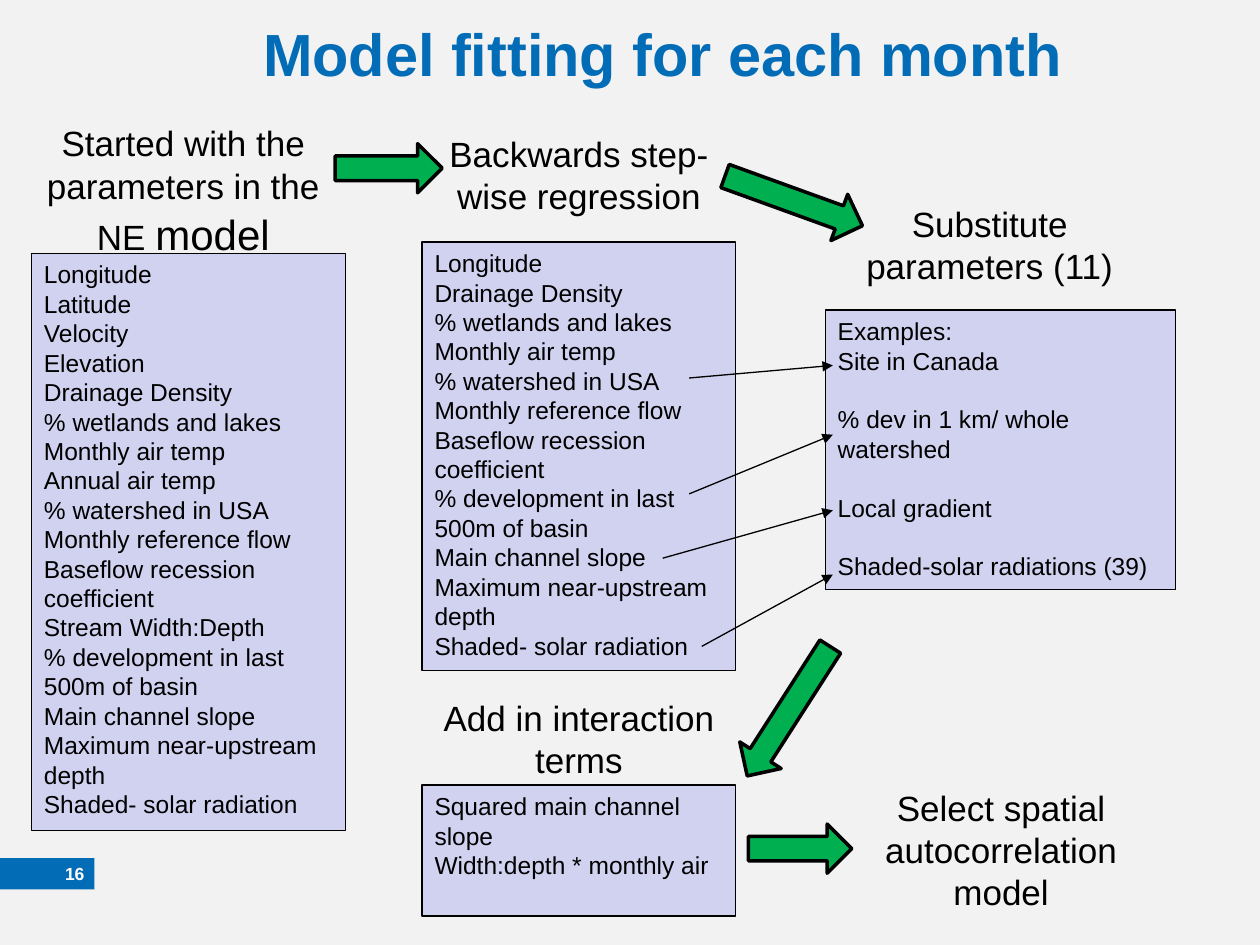
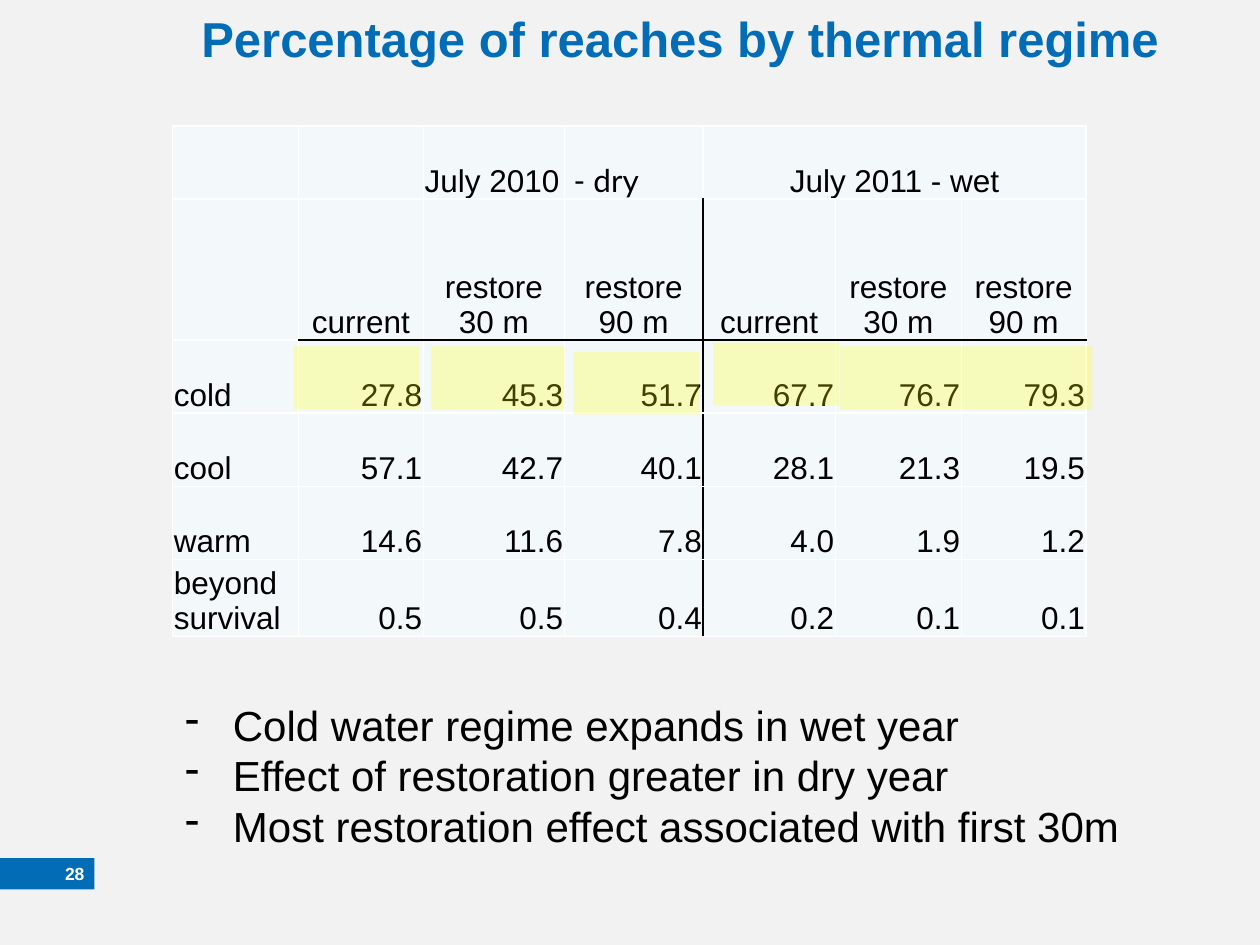
from lxml.etree import SubElement
from pptx import Presentation
from pptx.dml.color import RGBColor
from pptx.enum.shapes import MSO_CONNECTOR, MSO_SHAPE
from pptx.enum.text import MSO_ANCHOR, PP_ALIGN
from pptx.oxml.ns import qn
from pptx.util import Emu, Pt

EMU_PER_PX = 9144  # 100 px to the inch
FONT = "Arial"
LEADING = 1.2
COLORS = {
    "paper": "F2F2F2",
    "brand": "026CB6",
    "list": "D1D1F0",
    "arrow": "00B050",
    "cell": "F3F9FA",
    "highlight": "FFFF00",
    "ink": "000000",
    "white": "FFFFFF",
}


def px(length):
    return Emu(length * EMU_PER_PX)


def rgb(name):
    return RGBColor.from_string(COLORS[name])


def add_color(parent, name):
    fill = SubElement(parent, qn("a:solidFill"))
    return SubElement(fill, qn("a:srgbClr"), val=COLORS[name])


def set_insets(target, left, top, right, bottom):
    target.margin_left, target.margin_top = px(left), px(top)
    target.margin_right, target.margin_bottom = px(right), px(bottom)


def write(frame, text, size=14, color="ink", bold=False, align=PP_ALIGN.LEFT,
          font=FONT, spacing=None, gap=0, gap_before=(), hanging=0):
    """Fill a text frame from paragraphs; each is a string or (text, size) spans.

    gap is the space in points above the paragraphs numbered in gap_before;
    hanging gives dash bullets with that indent.
    """
    for number, content in enumerate([text] if isinstance(text, str) else text):
        para = frame.paragraphs[0] if number == 0 else frame.add_paragraph()
        if hanging:
            properties = para._p.get_or_add_pPr()
            properties.set("marL", str(px(hanging)))
            properties.set("indent", str(-px(hanging)))
            SubElement(properties, qn("a:buChar"), char="-")
        para.alignment = align
        if spacing:
            para.line_spacing = spacing
        if number in gap_before:
            para.space_before = Pt(gap)
        spans = [(content, size)] if isinstance(content, str) else content
        for words, span_size in spans:
            span = para.add_run()
            span.text = words
            span.font.name = font
            span.font.size = Pt(span_size)
            span.font.bold = bold
            span.font.color.rgb = rgb(color)


class Slides:
    """Holds the deck, its style and the page being drawn."""

    def __init__(self):
        self.deck = Presentation()
        self.deck.slide_width, self.deck.slide_height = px(1000), px(750)

    def new_page(self, number, title, left, top, size):
        self.page = self.deck.slides.add_slide(self.deck.slide_layouts[6])
        background = self.page.background.fill
        background.solid()
        background.fore_color.rgb = rgb("paper")
        self.shape(0, 681, 75, 25, "brand")
        self.text(0, 681, 67, 25, number, size=10, color="white", bold=True,
                  align=PP_ALIGN.RIGHT, insets=(0, 0, 0, 0), anchor=MSO_ANCHOR.MIDDLE)
        self.text(left, top, 990 - left, 83, title, size=size, color="brand", bold=True)

    def text(self, left, top, width, height, text, insets=(10, 5, 10, 5),
             anchor=MSO_ANCHOR.TOP, size=20, **style):
        box = self.page.shapes.add_textbox(px(left), px(top), px(width), px(height))
        frame = box.text_frame
        frame.word_wrap = True
        frame.vertical_anchor = anchor
        set_insets(frame, *insets)
        style.setdefault("spacing", Pt(LEADING * size))
        write(frame, text, size=size, **style)

    def heading(self, left, top, height, text, **style):
        self.text(left, top, 249, height, text, align=PP_ALIGN.CENTER, **style)

    def shape(self, left, top, width, height, color, kind=MSO_SHAPE.RECTANGLE,
              line=0, rotation=0, opacity=100):
        shape = self.page.shapes.add_shape(kind, px(left), px(top), px(width), px(height))
        shape.shadow.inherit = False
        shape.rotation = rotation
        shape.fill.solid()
        shape.fill.fore_color.rgb = rgb(color)
        if opacity < 100:
            tint = shape.fill._xPr.find(qn("a:solidFill"))[0]
            SubElement(tint, qn("a:alpha"), val=str(opacity * 1000))
        if line:
            shape.line.color.rgb = rgb("ink")
            shape.line.width = Pt(line)
        else:
            shape.line.fill.background()
        return shape

    def list_box(self, left, top, width, height, items, **style):
        frame = self.shape(left, top, width, height, "list", line=0.75).text_frame
        frame.word_wrap = True
        frame.vertical_anchor = MSO_ANCHOR.TOP
        write(frame, items, size=14, spacing=Pt(LEADING * 14), **style)

    def block_arrow(self, left, top, width, rotation=0):
        self.shape(left, top, width, 39, "arrow", MSO_SHAPE.RIGHT_ARROW, 2, rotation)

    def thin_arrow(self, start, end):
        line = self.page.shapes.add_connector(
            MSO_CONNECTOR.STRAIGHT, *(px(value) for value in (*start, *end)))
        line.line.color.rgb = rgb("ink")
        line.line.width = Pt(0.75)
        SubElement(line.line._get_or_add_ln(), qn("a:tailEnd"), type="triangle")
        SubElement(line._element.spPr, qn("a:effectLst"))

    def table(self, left, top, widths, heights):
        grid = self.page.shapes.add_table(
            len(heights), len(widths), px(left), px(top), px(sum(widths)), px(sum(heights))).table
        grid.first_row = grid.horz_banding = False
        for column, width in zip(grid.columns, widths):
            column.width = px(width)
        for row, height in zip(grid.rows, heights):
            row.height = px(height)
        return grid

    def cell(self, cell, text, black_edges, **style):
        """Fill a table cell; black_edges names its dark borders among L, R, T, B."""
        cell.vertical_anchor = MSO_ANCHOR.BOTTOM
        set_insets(cell, 1, 1, 1, 0)
        properties = cell._tc.get_or_add_tcPr()
        for edge in "LRTB":
            border = SubElement(properties, qn(f"a:ln{edge}"), w=str(Pt(1)))
            add_color(border, "ink" if edge in black_edges else "white")
        cell.fill.solid()
        cell.fill.fore_color.rgb = rgb("cell")
        if text:
            write(cell.text_frame, text, size=18, **style)


def draw_model_fitting(slides):
    slides.new_page("16", "Model fitting for each month", 199, 9, 34)

    slides.heading(21, 90, 118,
                   [[("Started with the parameters in the NE ", 20), ("model", 24)]],
                   spacing=1.045)
    slides.heading(335, 100, 77, "Backwards step-wise regression")
    slides.heading(661, 156, 77, "Substitute parameters (11)")
    slides.heading(335, 548, 77, "Add in interaction terms")
    slides.heading(670, 619, 111, "Select spatial autocorrelation model")

    basin = ["Baseflow recession coefficient"]
    development = ["% development in last 500m of basin", "Main channel slope",
                   "Maximum near-upstream depth", "Shaded- solar radiation"]
    slides.list_box(25, 201, 249, 458, [
        "Longitude", "Latitude", "Velocity", "Elevation", "Drainage Density",
        "% wetlands and lakes", "Monthly air temp", "Annual air temp",
        "% watershed in USA", "Monthly reference flow", *basin,
        "Stream Width:Depth", *development])
    slides.list_box(335, 192, 249, 340, [
        "Longitude", "Drainage Density", "% wetlands and lakes", "Monthly air temp",
        "% watershed in USA", "Monthly reference flow", *basin, *development])
    slides.list_box(655, 246, 278, 222, [
        "Examples:", "Site in Canada", "% dev in 1 km/ whole watershed",
        "Local gradient", "Shaded-solar radiations (39)"],
        gap=LEADING * 14, gap_before=(2, 3, 4))
    slides.list_box(335, 623, 249, 104,
                    ["Squared main channel slope", "Width:depth * monthly air"])

    for left, top, width, rotation in ((266, 114, 85, 0), (572, 140, 116, 19.9),
                                       (565, 545, 122, 122.7), (594, 654, 82, 0)):
        slides.block_arrow(left, top, width, rotation)
    for start, end_y in (((547, 300), 290), ((547, 392), 345),
                         ((526, 443), 405), ((557, 513), 456)):
        slides.thin_arrow(start, (661, end_y))


def draw_thermal_regimes(slides):
    slides.new_page("28", "Percentage of reaches by thermal regime", 150, 2, 28)

    scenarios = ["current", "restore 30 m", ["restore", "90 m"],
                 "current", "restore 30 m", "restore 90 m"]
    rows = [
        ["", "", "July 2010", " - dry", "July 2011 - wet", "", ""],
        ["", *scenarios],
        ["cold", "27.8", "45.3", "51.7", "67.7", "76.7", "79.3"],
        ["cool", "57.1", "42.7", "40.1", "28.1", "21.3", "19.5"],
        ["warm", "14.6", "11.6", "7.8", "4.0", "1.9", "1.2"],
        ["beyond survival", "0.5", "0.5", "0.4", "0.2", "0.1", "0.1"],
    ]
    grid = slides.table(137, 100, [100, 99, 112, 110, 105, 100, 99],
                        [58, 112, 58, 58, 58, 58])
    grid.cell(0, 4).merge(grid.cell(0, 6))
    for row, texts in enumerate(rows):
        for column, text in enumerate(texts):
            edges = ""
            if row > 0:
                edges += {3: "R", 4: "L"}.get(column, "")
            if column > 0:
                edges += {1: "B", 2: "T"}.get(row, "")
            if column == 0 or (row == 0 and column < 4):
                align = PP_ALIGN.LEFT
            else:
                align = PP_ALIGN.CENTER if row < 2 else PP_ALIGN.RIGHT
            slides.cell(grid.cell(row, column), text, edges, align=align,
                        font="Lato" if (row, column) == (0, 3) else FONT)

    slides.text(137, 550, 779, 131, [
        "Cold water regime expands in wet year",
        "Effect of restoration greater in dry year",
        "Most restoration effect associated with first 30m"], size=24, hanging=38)

    for left, top, width in ((233, 275, 100), (342, 275, 106), (455, 279, 100),
                             (566, 272, 100), (667, 275, 100), (767, 275, 100)):
        slides.shape(left, top, width, 50, "highlight", opacity=25)


def main():
    slides = Slides()
    draw_model_fitting(slides)
    draw_thermal_regimes(slides)
    slides.deck.save("out.pptx")


if __name__ == "__main__":
    main()
